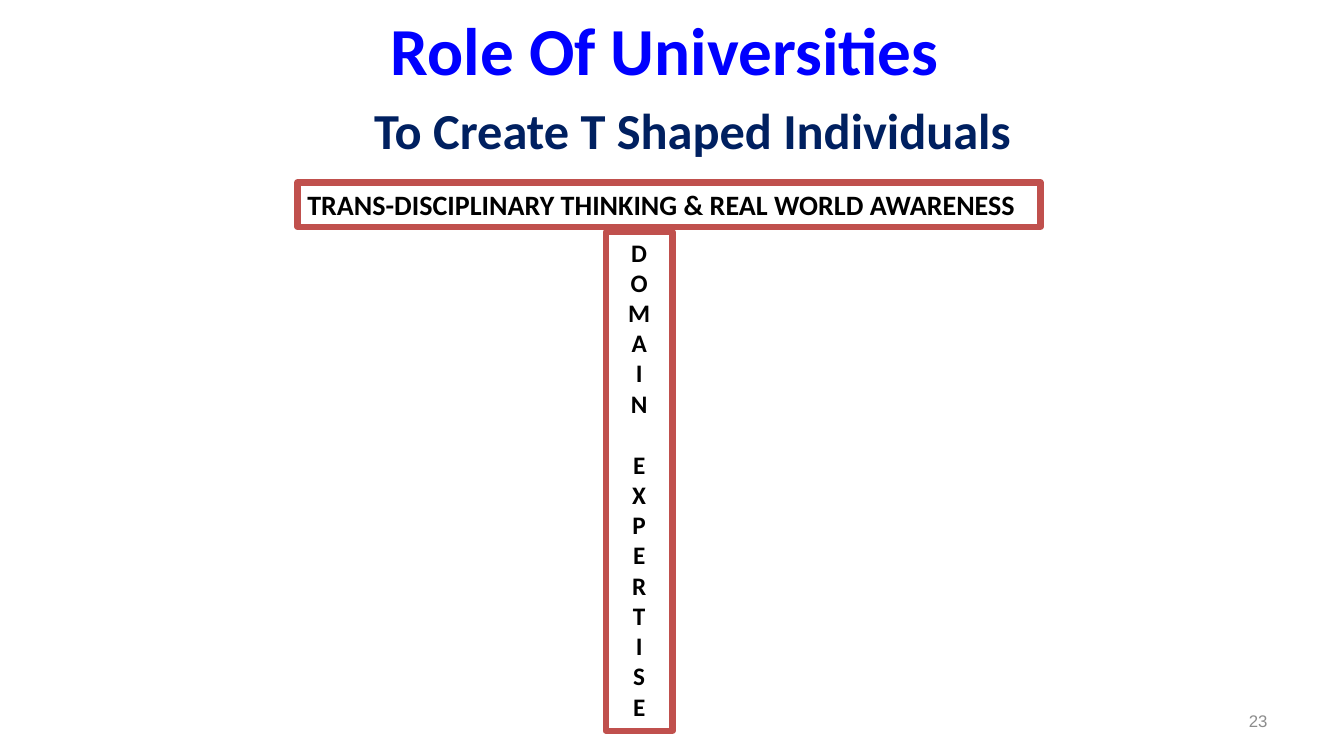
from pptx import Presentation
from pptx.dml.color import RGBColor
from pptx.enum.shapes import MSO_SHAPE as Shape
from pptx.enum.text import MSO_ANCHOR as Anchor, MSO_AUTO_SIZE as AutoSize, PP_ALIGN as Align
from pptx.util import Inches, Pt

TITLE = "Role Of Universities "
SUBTITLE = "To Create T Shaped Individuals"
BREADTH = "TRANS-DISCIPLINARY THINKING & REAL WORLD AWARENESS"
DEPTH = ["DOMAIN", "EXPERTISE"]
PAGE_NUMBER = "23"

THEME = {
    "white": RGBColor.from_string("FFFFFF"),
    "outline": RGBColor.from_string("C0504D"),
    "outline_width": Pt(4.5),
    "word_gap": Pt(22),
    "title": {"name": "Calibri", "size": Pt(48), "bold": True, "color": "0000FF"},
    "subtitle": {"name": "Calibri", "size": Pt(36), "bold": True, "color": "002060"},
    "breadth": {"name": "Calibri", "size": Pt(20), "bold": True, "color": "000000"},
    "depth": {"name": "Calibri", "size": Pt(18), "bold": True, "color": "000000"},
    "number": {"name": "Arial", "size": Pt(12), "bold": False, "color": "8C8C8C"},
}


def place(shape, left, top, width, height):
    shape.left, shape.top = Inches(left), Inches(top)
    shape.width, shape.height = Inches(width), Inches(height)


def write(shape, lines, style, align, anchor=Anchor.TOP):
    """Fill a shape with one paragraph per line, gaps between them."""
    frame = shape.text_frame
    frame.word_wrap = True
    frame.auto_size = AutoSize.NONE
    frame.vertical_anchor = anchor
    for index, line in enumerate(lines):
        para = frame.add_paragraph() if index else frame.paragraphs[0]
        para.text = line
        para.alignment = align
        para.space_before = THEME["word_gap"] if index else Pt(0)
        for span in para.runs:
            for key, value in THEME[style].items():
                if key == "color":
                    span.font.color.rgb = RGBColor.from_string(value)
                else:
                    setattr(span.font, key, value)


def add_bar(page, bounds, lines, style, align):
    bar = page.shapes.add_shape(Shape.RECTANGLE, *map(Inches, bounds))
    bar.shadow.inherit = False
    bar.fill.solid()
    bar.fill.fore_color.rgb = THEME["white"]
    bar.line.color.rgb = THEME["outline"]
    bar.line.width = THEME["outline_width"]
    write(bar, lines, style, align)


def add_label(page, bounds, text, style, align, anchor=Anchor.TOP):
    box = page.shapes.add_textbox(*map(Inches, bounds))
    write(box, [text], style, align, anchor)


def main():
    deck = Presentation()
    deck.slide_width, deck.slide_height = Inches(13.33), Inches(7.5)
    page = deck.slides.add_slide(deck.slide_layouts[5])

    title = page.shapes.title
    place(title, 0.92, -0.24, 11.5, 1.45)
    write(title, [TITLE], "title", Align.CENTER, Anchor.MIDDLE)
    add_label(page, (0.92, 0.93, 11.9, 0.75), SUBTITLE, "subtitle", Align.CENTER)

    add_bar(page, (2.95, 1.81, 7.37, 0.44), [BREADTH], "breadth", Align.LEFT)
    stacked_words = ["\v".join(word) for word in DEPTH]
    add_bar(page, (6.01, 2.3, 0.66, 4.95), stacked_words, "depth", Align.CENTER)

    add_label(page, (9.56, 6.95, 3.11, 0.4), PAGE_NUMBER, "number", Align.RIGHT, Anchor.MIDDLE)
    deck.save("out.pptx")


if __name__ == "__main__":
    main()
